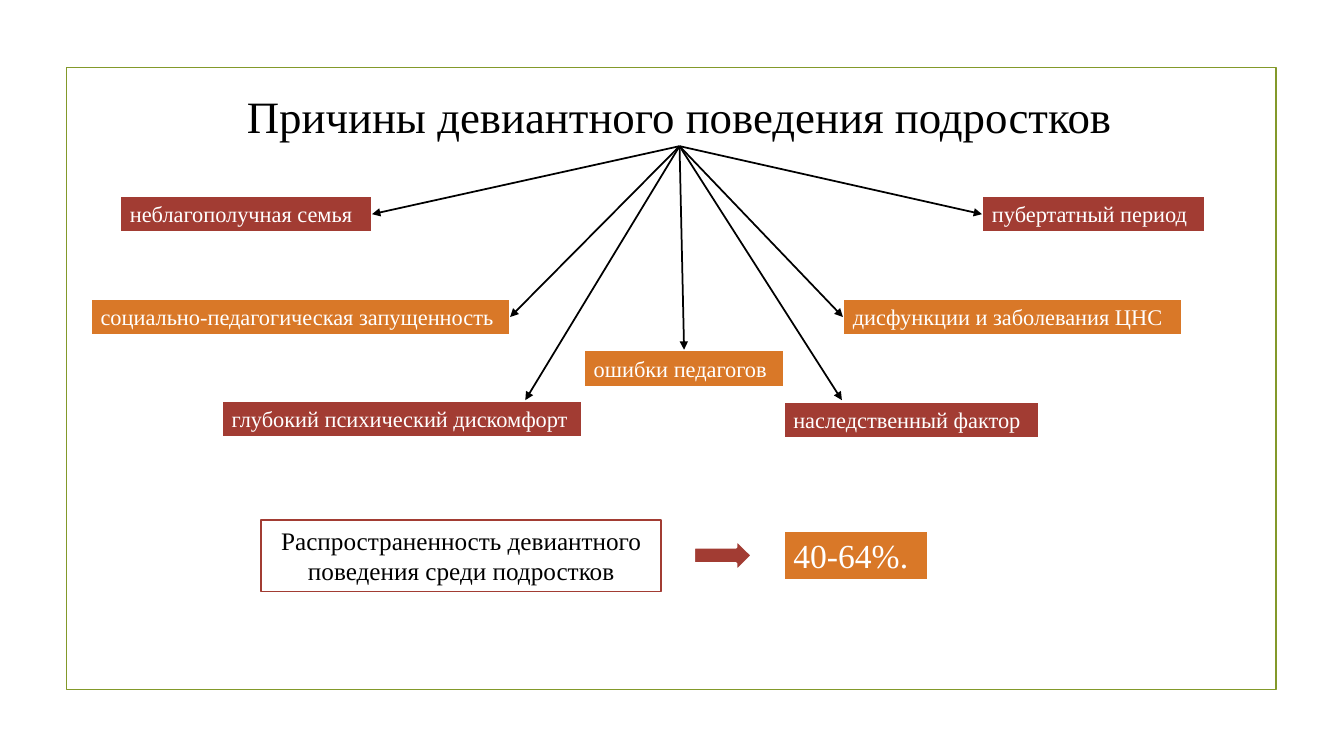
from dataclasses import dataclass

from lxml.etree import SubElement
from pptx import Presentation
from pptx.dml.color import RGBColor
from pptx.enum.shapes import MSO_CONNECTOR, MSO_SHAPE
from pptx.enum.text import MSO_ANCHOR, MSO_AUTO_SIZE, PP_ALIGN
from pptx.oxml.ns import qn
from pptx.util import Inches, Pt


@dataclass(frozen=True)
class Theme:
    font: str = "Times New Roman"
    black: str = "000000"
    white: str = "FFFFFF"
    red: str = "A23C33"
    orange: str = "D97828"
    green: str = "83992A"
    title_size: float = 32
    figure_size: float = 24
    statement_size: float = 18
    label_size: float = 16
    thin: float = 1.25
    thick: float = 2


@dataclass(frozen=True)
class Box:
    left: float
    top: float
    width: float
    height: float

    def inner(self, left, top, width, height):
        return Box(self.left + left, self.top + top, width, height)

    def lengths(self):
        return [Inches(value) for value in (self.left, self.top, self.width, self.height)]


THEME = Theme()
LEFT, TOP, RIGHT = 1, 0, 3
TITLE_BOTTOM = 2
LABEL_HEIGHT = 0.37

CAUSES = [
    ("неблагополучная семья", THEME.red, (0.29, 1.1, 2.5), RIGHT),
    ("социально-педагогическая запущенность", THEME.orange, (0, 2.12, 4.16), RIGHT),
    ("глубокий психический дискомфорт", THEME.red, (1.3, 3.13, 3.58), (4.31, 3.13)),
    ("ошибки педагогов", THEME.orange, (4.89, 2.63, 1.99), TOP),
    ("наследственный фактор", THEME.red, (6.87, 3.14, 2.54), (7.45, 3.13)),
    ("дисфункции и заболевания ЦНС", THEME.orange, (7.46, 2.12, 3.37), LEFT),
    ("пубертатный период", THEME.red, (8.84, 1.1, 2.22), LEFT),
]


def set_values(target, values):
    for name, value in values.items():
        setattr(target, name, value)


def add_block(page, box, line, width, fill=None, kind=MSO_SHAPE.RECTANGLE):
    block = page.shapes.add_shape(kind, *box.lengths())
    block.shadow.inherit = False
    if fill:
        block.fill.solid()
        block.fill.fore_color.rgb = RGBColor.from_string(fill)
    else:
        block.fill.background()
    block.line.color.rgb = RGBColor.from_string(line)
    block.line.width = Pt(width)
    return block


def write(shape, text, size, color, alignment, frame_values):
    set_values(shape.text_frame, frame_values)
    para = shape.text_frame.paragraphs[0]
    para.alignment = alignment
    span = para.add_run()
    span.text = text
    set_values(span.font, {"name": THEME.font, "size": Pt(size)})
    span.font.color.rgb = RGBColor.from_string(color)


def add_label(page, box, text, fill, size):
    label = add_block(page, box, THEME.white, THEME.thick, fill)
    write(label, text, size, THEME.white, PP_ALIGN.LEFT, {
        "word_wrap": False,
        "auto_size": MSO_AUTO_SIZE.SHAPE_TO_FIT_TEXT,
        "vertical_anchor": MSO_ANCHOR.TOP,
    })
    return label


def add_arrow(page, box, title, label, target):
    end = (0, 0)
    if isinstance(target, tuple):
        end = (Inches(box.left + target[0]), Inches(box.top + target[1]))
    arrow = page.shapes.add_connector(MSO_CONNECTOR.STRAIGHT, 0, 0, *end)
    arrow.begin_connect(title, TITLE_BOTTOM)
    if not isinstance(target, tuple):
        arrow.end_connect(label, target)
    arrow.line.color.rgb = RGBColor.from_string(THEME.black)
    arrow.line.width = Pt(THEME.thin)
    SubElement(arrow.line._get_or_add_ln(), qn("a:tailEnd"), type="triangle")
    SubElement(arrow._element.spPr, qn("a:effectLst"))


def add_causes(page, box):
    title = page.shapes.add_textbox(*box.inner(0.83, 0, 10.02, 0.61).lengths())
    write(title, "Причины девиантного поведения подростков", THEME.title_size,
          THEME.black, PP_ALIGN.CENTER,
          {"word_wrap": True, "vertical_anchor": MSO_ANCHOR.MIDDLE})
    labels = [
        add_label(page, box.inner(*place, LABEL_HEIGHT), text, fill, THEME.label_size)
        for text, fill, place, target in CAUSES
    ]
    for label, (text, fill, place, target) in zip(labels, CAUSES):
        add_arrow(page, box, title, label, target)


def add_prevalence(page, box):
    statement = add_block(page, box.inner(0, 0, 3.97, 0.71), THEME.red, THEME.thin, THEME.white)
    write(statement, "Распространенность девиантного поведения среди подростков",
          THEME.statement_size, THEME.black, PP_ALIGN.CENTER, {
              "word_wrap": True,
              "auto_size": MSO_AUTO_SIZE.SHAPE_TO_FIT_TEXT,
              "vertical_anchor": MSO_ANCHOR.TOP,
          })
    add_label(page, box.inner(5.18, 0.1, 1.44, 0.5), "40-64%.", THEME.orange, THEME.figure_size)
    add_block(page, box.inner(4.29, 0.19, 0.58, 0.32), THEME.white, THEME.thick,
              THEME.red, MSO_SHAPE.RIGHT_ARROW)


def main():
    deck = Presentation()
    set_values(deck, {"slide_width": Inches(13.33), "slide_height": Inches(7.5)})
    page = deck.slides.add_slide(deck.slide_layouts[6])
    add_block(page, Box(0.66, 0.67, 12, 6.17), THEME.green, THEME.thin)
    add_causes(page, Box(0.9, 0.84, 11.06, 3.51))
    add_prevalence(page, Box(2.59, 5.16, 6.62, 0.71))
    deck.save("out.pptx")


if __name__ == "__main__":
    main()
